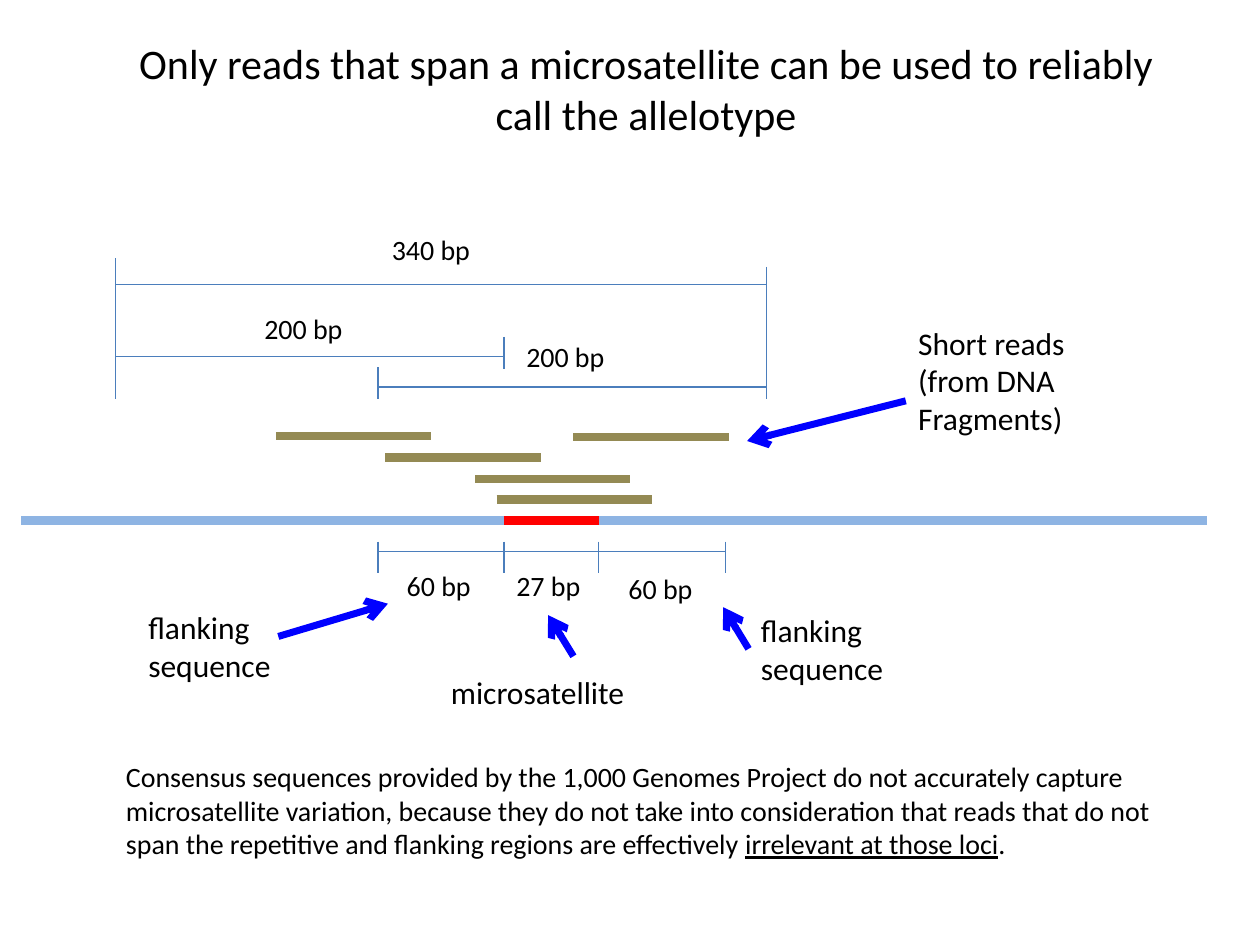
from lxml import etree
from pptx import Presentation
from pptx.dml.color import RGBColor
from pptx.enum.shapes import MSO_CONNECTOR
from pptx.enum.text import MSO_ANCHOR, PP_ALIGN
from pptx.oxml.ns import qn
from pptx.util import Cm, Pt

STRAIGHT = MSO_CONNECTOR.STRAIGHT
MIDDLE = MSO_ANCHOR.MIDDLE
CENTER = PP_ALIGN.CENTER

BLACK = RGBColor(0x00, 0x00, 0x00)
GENOME_BLUE = RGBColor(0x8E, 0xB4, 0xE3)
REPEAT_RED = RGBColor(0xFF, 0x00, 0x00)
RULER_BLUE = RGBColor(0x4B, 0x7E, 0xBC)
READ_OLIVE = RGBColor(0x94, 0x8A, 0x54)
ARROW_BLUE = RGBColor(0x00, 0x00, 0xFF)

# Horizontal landmarks, in cm
SPAN_START, SPAN_END = 2.33, 15.45
FLANK_START, REPEAT_START, REPEAT_END, FLANK_END = 7.62, 10.16, 12.07, 14.63
GENOME_Y = 10.49
READ_LENGTH = 3.13
TICK_LENGTH = 0.64


class Diagram:
    """Draws on one slide in a shared style; all lengths are in cm."""

    font = "Calibri"
    thick, thin, arrow_width = 4.75, 0.75, 4

    def __init__(self, slide):
        self.slide = slide

    def format_text(self, frame, size):
        for paragraph in frame.paragraphs:
            for run in paragraph.runs:
                run.font.name = self.font
                run.font.size = Pt(size)
                run.font.color.rgb = BLACK

    def title(self, text, left, top, width, height):
        title = self.slide.shapes.title
        title.left, title.top = Cm(left), Cm(top)
        title.width, title.height = Cm(width), Cm(height)
        frame = title.text_frame
        frame.text = text
        frame.vertical_anchor = MIDDLE
        frame.paragraphs[0].alignment = CENTER
        self.format_text(frame, 24)

    def label(self, text, left, top, width, height, size=16, wrap=False):
        box = self.slide.shapes.add_textbox(Cm(left), Cm(top), Cm(width), Cm(height))
        frame = box.text_frame
        frame.word_wrap = wrap
        frame.text = text
        self.format_text(frame, size)
        return frame

    def line(self, x1, y1, x2, y2, color, width):
        line = self.slide.shapes.add_connector(STRAIGHT, Cm(x1), Cm(y1), Cm(x2), Cm(y2))
        line.line.color.rgb = color
        line.line.width = Pt(width)
        etree.SubElement(line._element.spPr, qn("a:effectLst"))
        return line

    def arrow(self, x1, y1, x2, y2):
        arrow = self.line(x1, y1, x2, y2, ARROW_BLUE, self.arrow_width)
        etree.SubElement(arrow.line._get_or_add_ln(), qn("a:tailEnd"), type="arrow")

    def bar(self, x1, x2, y, color):
        self.line(x1, y, x2, y, color, self.thick)

    def tick(self, x, top, bottom):
        self.line(x, top, x, bottom, RULER_BLUE, self.thin)

    def ruler(self, y, marks, rise):
        """Measure between neighbouring marks; ticks start `rise` above y."""
        for start, end in zip(marks, marks[1:]):
            self.line(start, y, end, y, RULER_BLUE, self.thin)
        for mark in marks:
            self.tick(mark, y - rise, y - rise + TICK_LENGTH)


def main():
    presentation = Presentation()
    presentation.slide_width, presentation.slide_height = Cm(25.4), Cm(19.05)
    diagram = Diagram(presentation.slides.add_slide(presentation.slide_layouts[5]))

    diagram.title("Only reads that span a microsatellite can be used to reliably "
                  "call the allelotype", 1.91, 0.51, 22.23, 2.54)

    diagram.bar(0.43, 24.33, GENOME_Y, GENOME_BLUE)
    diagram.bar(REPEAT_START, REPEAT_END, GENOME_Y, REPEAT_RED)

    for start, y in [(5.56, 8.79), (11.56, 8.81), (7.77, 9.22),
                     (9.58, 9.65), (10.01, 10.07)]:
        diagram.bar(start, start + READ_LENGTH, y, READ_OLIVE)

    diagram.line(SPAN_START, 5.74, SPAN_END, 5.74, RULER_BLUE, diagram.thin)
    diagram.tick(SPAN_START, 5.21, 8.05)
    diagram.tick(SPAN_END, 5.38, 7.62)
    diagram.ruler(7.19, [SPAN_START, REPEAT_START], 0.4)
    diagram.ruler(7.8, [FLANK_START, SPAN_END], 0.4)
    diagram.ruler(11.12, [FLANK_START, REPEAT_START, REPEAT_END, FLANK_END], 0.2)

    for text, left, top, width in [
        ("340 bp", 7.65, 4.57, 2.26),
        ("200 bp", 5.08, 6.15, 2.26),
        ("200 bp", 10.36, 6.73, 2.26),
        ("60 bp", 7.95, 11.33, 1.93),
        ("27 bp", 10.16, 11.33, 1.93),
        ("60 bp", 12.42, 11.4, 1.93),
    ]:
        diagram.label(text, left, top, width, 0.94)

    diagram.label("Short reads\n(from DNA\nFragments)", 18.26, 6.4, 5.03, 3.33, 18)
    diagram.label("microsatellite", 8.84, 13.44, 4.27, 1.02, 18)
    for left, top in [(2.74, 12.14), (15.09, 12.19)]:
        diagram.label("flanking sequence", left, top, 4.42, 1.8, 18, wrap=True)

    for ends in [(18.26, 8.08, 15.06, 8.89), (5.61, 12.83, 7.82, 12.17),
                 (11.56, 13.23, 11.05, 12.4), (15.09, 13.08, 14.58, 12.24)]:
        diagram.arrow(*ends)

    conclusion = diagram.label(
        "Consensus sequences provided by the 1,000 Genomes Project do not accurately "
        "capture microsatellite variation, because they do not take into consideration "
        "that reads that do not span the repetitive and flanking regions are effectively ",
        2.29, 15.19, 21.41, 4.19, wrap=True)
    emphasis = conclusion.paragraphs[0].add_run()
    emphasis.text = "irrelevant at those loci"
    emphasis.font.underline = True
    conclusion.paragraphs[0].add_run().text = "."
    diagram.format_text(conclusion, 16)

    presentation.save("out.pptx")


if __name__ == "__main__":
    main()
